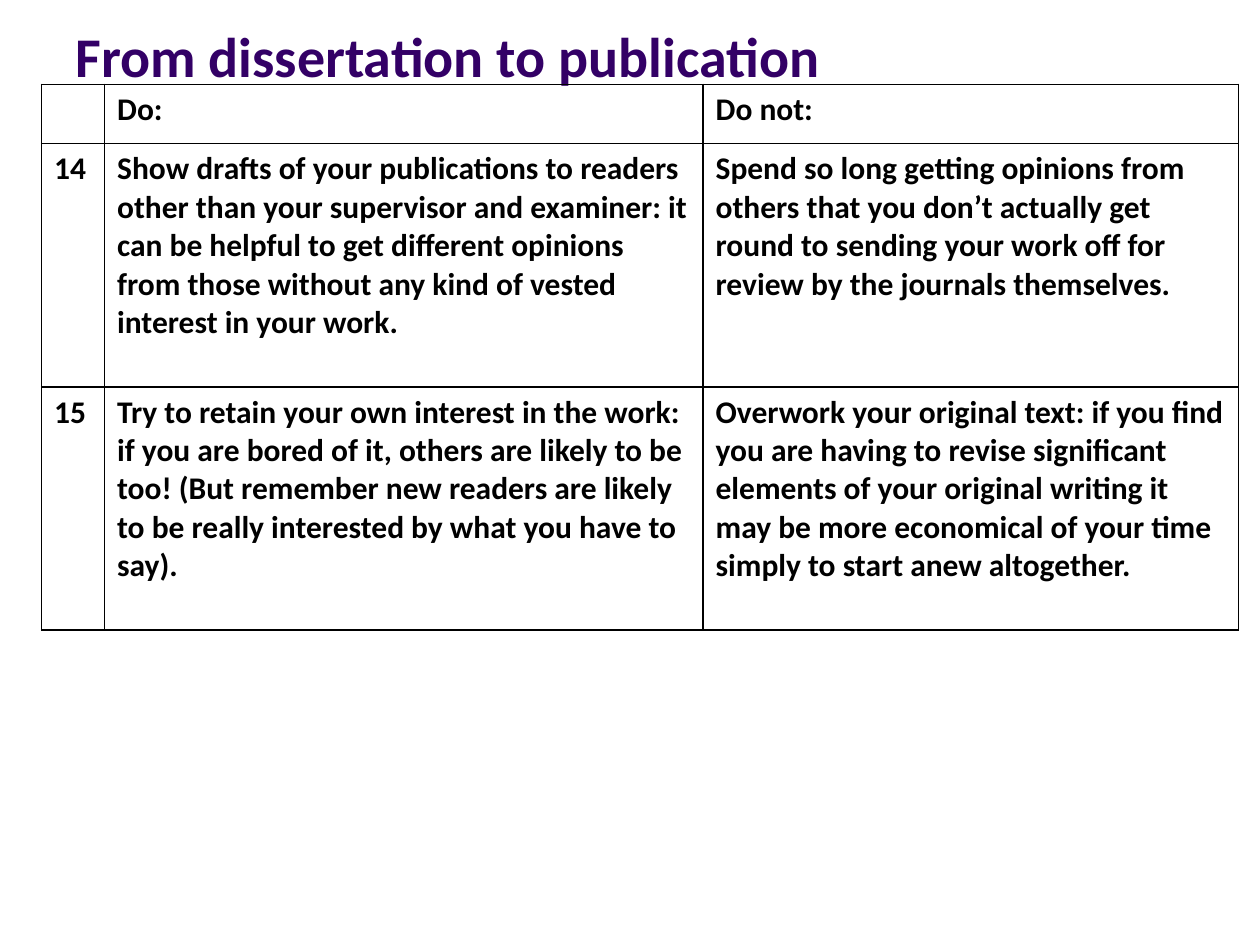
from dataclasses import dataclass

from lxml import etree
from pptx import Presentation
from pptx.dml.color import RGBColor
from pptx.enum.text import MSO_ANCHOR
from pptx.oxml.ns import qn
from pptx.util import Inches, Pt

BOTTOM = MSO_ANCHOR.BOTTOM
BLANK = 6


@dataclass(frozen=True)
class Theme:
    font: str = "Calibri"
    title: str = "330066"
    ink: str = "000000"
    title_size: int = 32
    body_size: int = 18
    border: int = 1


THEME = Theme()
COLS = (0.5, 4.75, 4.25)
ROWS = (0.47, 1.93, 1.93)
ADVICE = (
    ("", "Do:", "Do not:"),
    (
        "14",
        "Show drafts of your publications to readers other than your "
        "supervisor and examiner: it can be helpful to get different opinions "
        "from those without any kind of vested interest in your work.",
        "Spend so long getting opinions from others that you don’t actually "
        "get round to sending your work off for review by the journals "
        "themselves.",
    ),
    (
        "15",
        "Try to retain your own interest in the work: if you are bored of it, "
        "others are likely to be too! (But remember new readers are likely to "
        "be really interested by what you have to say).",
        "Overwork your original text: if you find you are having to revise "
        "significant elements of your original writing it may be more "
        "economical of your time simply to start anew altogether.",
    ),
)


def set_text(frame, text, size, color):
    frame.text = text
    for run in frame.paragraphs[0].runs:
        font = run.font
        font.name = THEME.font
        font.size = Pt(size)
        font.bold = True
        font.color.rgb = RGBColor.from_string(color)


def add_title(slide, text):
    box = slide.shapes.add_textbox(
        Inches(0.5), Inches(0.17), Inches(8.25), Inches(0.58)
    )
    frame = box.text_frame
    frame.word_wrap = True
    frame.vertical_anchor = BOTTOM
    set_text(frame, text, THEME.title_size, THEME.title)


def add_border(cell):
    """Rule all four sides; the lines must come before the cell's fill."""
    props = cell._tc.get_or_add_tcPr()
    for spot, side in enumerate(("a:lnL", "a:lnR", "a:lnT", "a:lnB")):
        line = etree.Element(qn(side), w=str(Pt(THEME.border)))
        fill = etree.SubElement(line, qn("a:solidFill"))
        etree.SubElement(fill, qn("a:srgbClr"), val=THEME.ink)
        props.insert(spot, line)


def add_grid(slide, rows):
    shape = slide.shapes.add_table(
        len(ROWS), len(COLS), Inches(0.33), Inches(0.67),
        Inches(sum(COLS)), Inches(sum(ROWS)),
    )
    table = shape.table
    table.first_row = False
    table.horz_banding = False
    for col, width in zip(table.columns, COLS):
        col.width = Inches(width)
    for row, height, texts in zip(table.rows, ROWS, rows):
        row.height = Inches(height)
        for cell, text in zip(row.cells, texts):
            cell.fill.background()
            add_border(cell)
            set_text(cell.text_frame, text, THEME.body_size, THEME.ink)


def main():
    deck = Presentation()
    deck.slide_width = Inches(10)
    deck.slide_height = Inches(7.5)
    slide = deck.slides.add_slide(deck.slide_layouts[BLANK])
    add_title(slide, "From dissertation to publication")
    add_grid(slide, ADVICE)
    deck.save("out.pptx")


if __name__ == "__main__":
    main()
